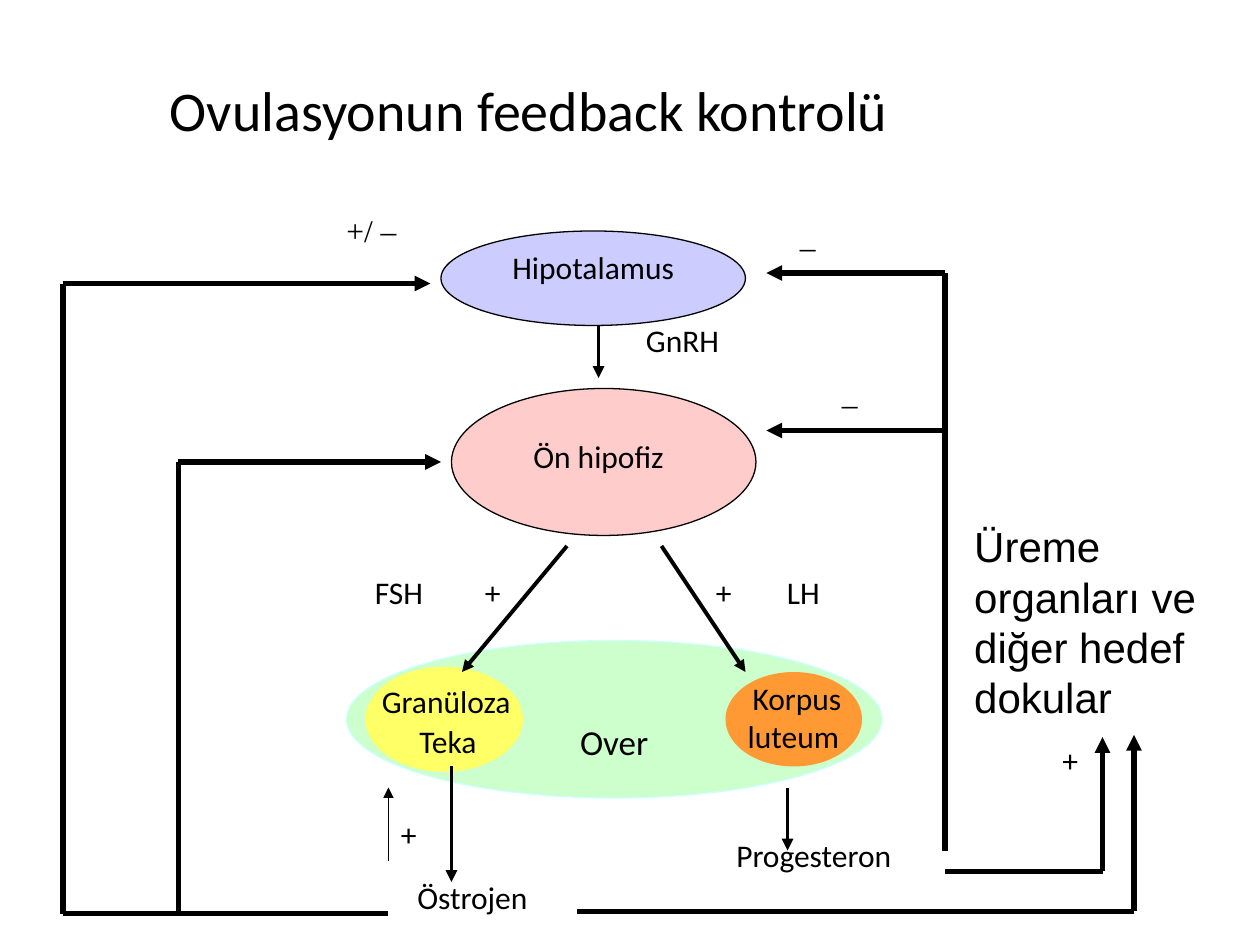
from itertools import pairwise

from pptx import Presentation
from pptx.dml.color import RGBColor
from pptx.enum.shapes import MSO_CONNECTOR as Connector, MSO_SHAPE as Shape
from pptx.enum.text import MSO_AUTO_SIZE as AutoSize, PP_ALIGN as Align
from pptx.oxml.ns import qn
from pptx.util import Inches, Pt
from lxml.etree import SubElement

BLACK = RGBColor(0x00, 0x00, 0x00)
LILAC = RGBColor(0xCC, 0xCC, 0xFF)
PINK = RGBColor(0xFF, 0xCC, 0xCC)
GREEN = RGBColor(0xCC, 0xFF, 0xCC)
CYAN = RGBColor(0xCC, 0xFF, 0xFF)
YELLOW = RGBColor(0xFF, 0xFF, 0x66)
ORANGE = RGBColor(0xFF, 0x99, 0x33)

deck = Presentation()
deck.slide_width, deck.slide_height = Inches(10), Inches(7.5)
page = deck.slides.add_slide(deck.slide_layouts[6])
CELL = deck.slide_width / 120  # grid of 120 columns by 90 rows


def cells(*counts):
    return [round(count * CELL) for count in counts]


def add_text(text, *place, size=18, font="Calibri", align=Align.CENTER, wrap=True):
    box = page.shapes.add_textbox(*cells(*place))
    frame = box.text_frame
    frame.word_wrap = wrap
    frame.auto_size = AutoSize.SHAPE_TO_FIT_TEXT
    para = frame.paragraphs[0]
    para.alignment = align
    span = para.add_run()
    span.text = text
    span.font.size = Pt(size)
    span.font.name = font
    span.font.color.rgb = BLACK


# Organs: column, row, width, height, fill, outline
organs = [
    (33, 61, 51, 15, GREEN, CYAN),
    (69.1, 64, 13, 9, ORANGE, None),
    (42, 22, 29, 9, LILAC, BLACK),
    (43, 37, 29, 14, PINK, BLACK),
    (34.8, 63.5, 15, 10, YELLOW, None),
]
for *place, fill, outline in organs:
    organ = page.shapes.add_shape(Shape.OVAL, *cells(*place))
    organ.shadow.inherit = False
    organ.fill.solid()
    organ.fill.fore_color.rgb = fill
    if outline is None:
        organ.line.fill.background()
    else:
        organ.line.color.rgb = outline
        organ.line.width = Pt(0.75)

# Organ and hormone names
names = [
    ("Hipotalamus", 42, 23, 29, 6),
    ("Ön hipofiz", 46, 41, 22, 6),
    ("GnRH", 57, 30, 16, 6),
    ("Granüloza", 32, 64.4, 21, 4.8),
    ("Teka ", 37, 68.2, 12, 4.8),
    ("Korpus luteum ", 68.9, 64.1, 14, 8.4),
    ("FSH", 32, 54, 12, 6),
    ("LH", 72, 54, 9, 6),
    ("Progesteron", 64, 79, 27, 6),
    ("Östrojen", 33, 83, 24, 6),
]
for name in names:
    add_text(*name)
add_text("Over", 48, 68, 21, 5.2, size=20)

# Feedback signs
for column, row in [(45, 54), (67, 54), (37, 77), (100, 70)]:
    add_text("+", column, row, 5.5, 6, align=Align.LEFT)
for sign, column, row, width in [("–", 79, 36, 4.4), ("+/ –", 31.8, 19.5, 8.8),
                                 ("–", 75, 21, 4.4)]:
    add_text(sign, column, row, width, 6, font="Times New Roman",
             align=Align.LEFT, wrap=False)

# Title and target tissues
add_text("Ovulasyonun feedback kontrolü", 15, 6.6, 100, 7.6, size=32, align=Align.LEFT)
add_text("Üreme organları ve diğer hedef dokular", 91.6, 49, 28.4, 20.4,
         size=24, font="Arial", align=Align.LEFT)

# Routes: line width, then the corners; each ends in an arrowhead
routes = [
    (2.25, (57, 31), (57, 36)),
    (2.25, (54, 52), (44, 64)),
    (2.25, (63, 52), (71, 64)),
    (2.25, (75, 75), (75, 81)),
    (2.25, (43, 73), (43, 84)),
    (0.75, (37, 82), (37, 75)),
    (3, (17, 87), (17, 44), (42, 44)),
    (3, (37, 87), (6, 87), (6, 27), (41, 27)),
    (3, (55, 86.8), (108, 86.8), (108, 70)),
    (3, (90, 81), (90, 26), (73, 26)),
    (3, (90, 41), (73, 41)),
    (3, (90, 83), (105, 83), (105, 70.2)),
]
for width, *corners in routes:
    for start, end in pairwise(corners):
        link = page.shapes.add_connector(Connector.STRAIGHT, *cells(*start, *end))
        link.line.color.rgb = BLACK
        link.line.width = Pt(width)
        if end == corners[-1]:
            SubElement(link.line._get_or_add_ln(), qn("a:tailEnd"), type="triangle")
        SubElement(link._element.spPr, qn("a:effectLst"))

deck.save("out.pptx")
